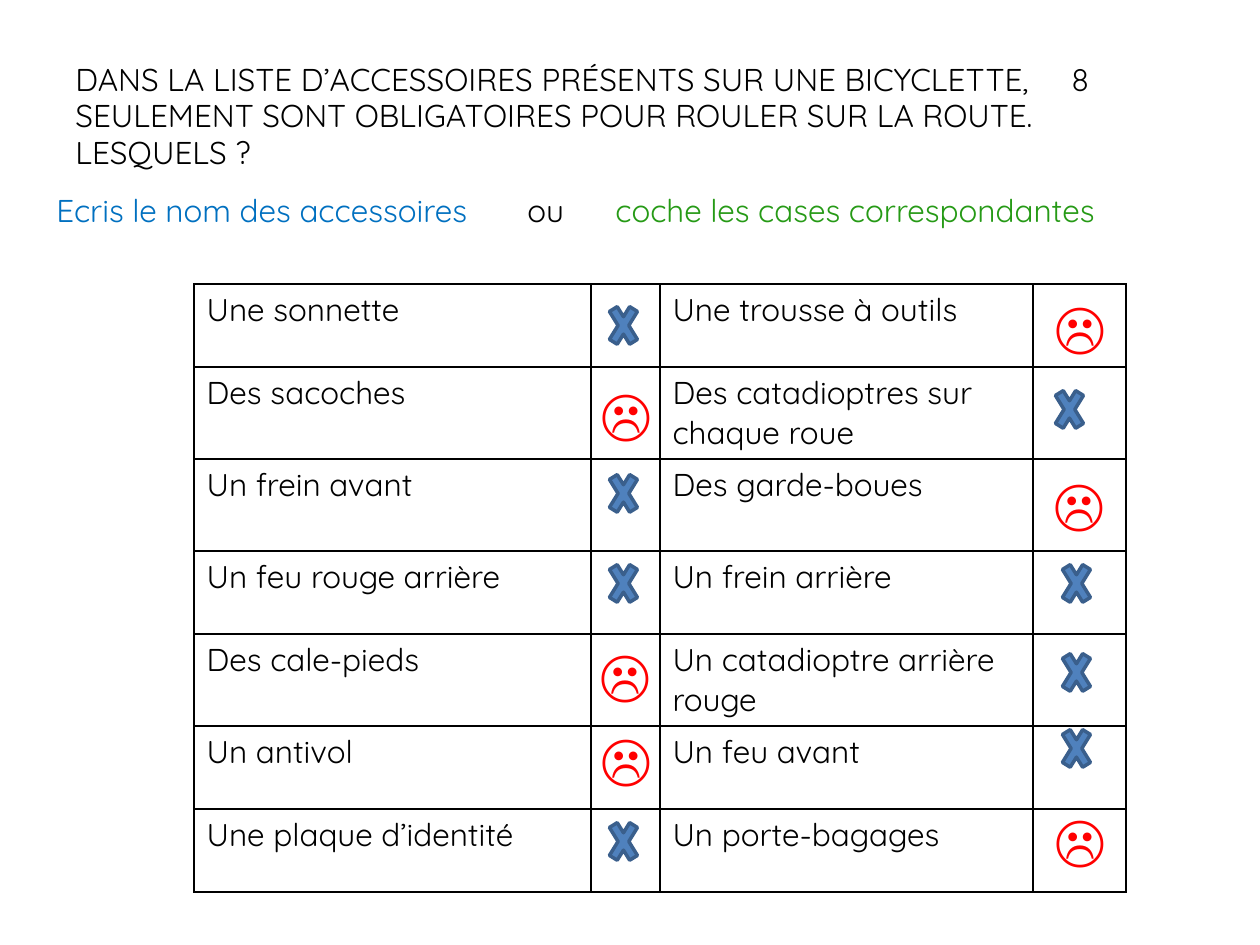
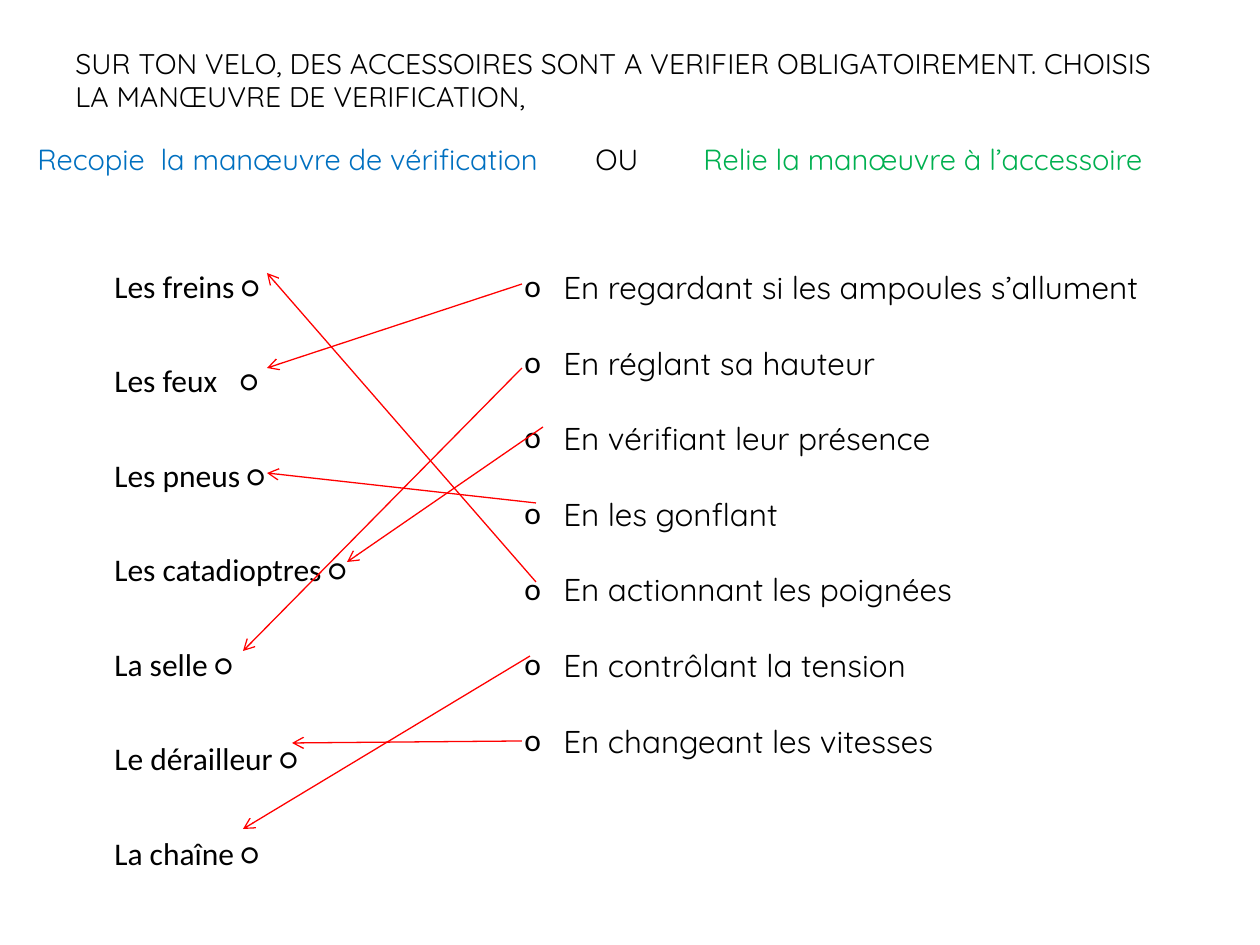
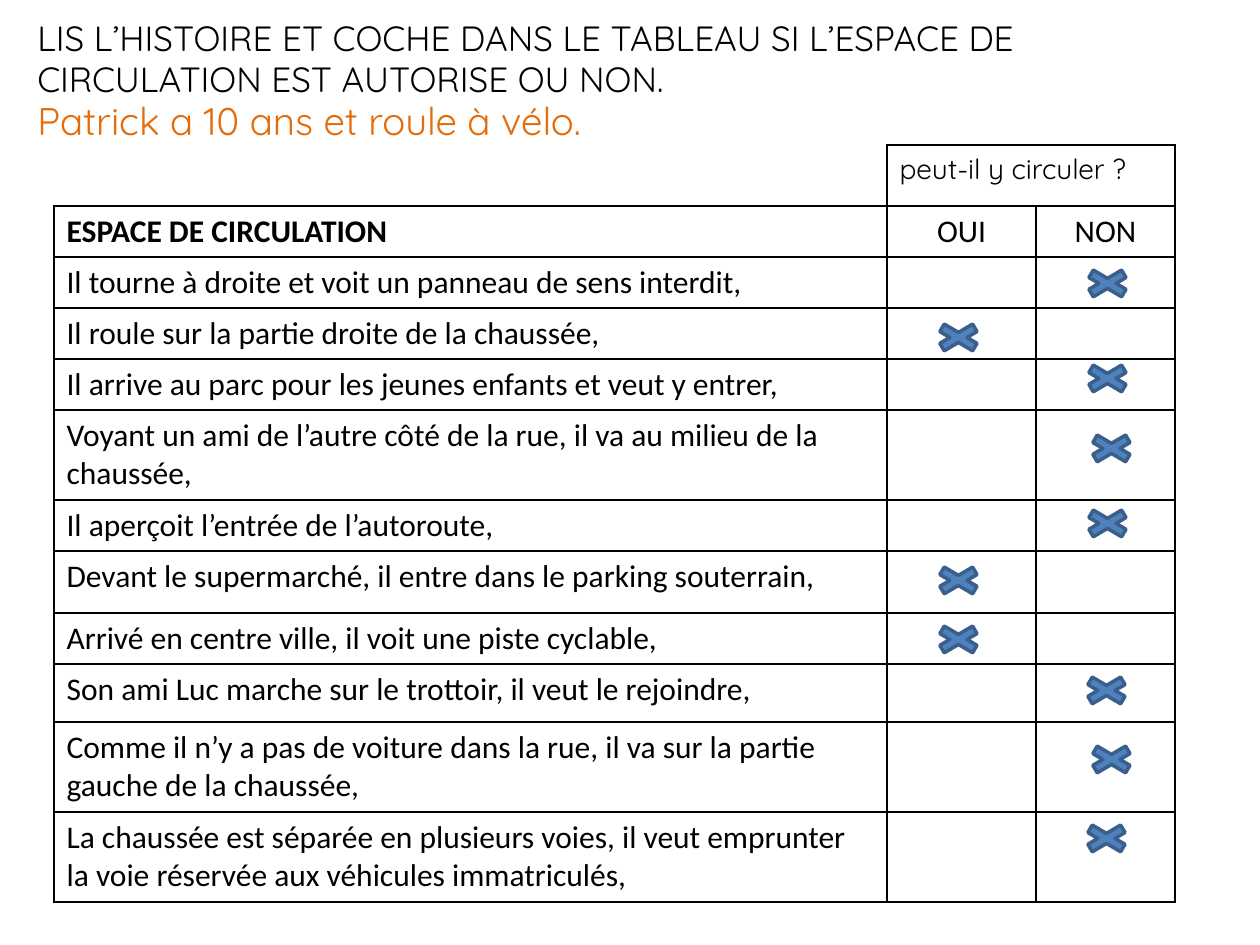
from dataclasses import dataclass

from lxml.etree import SubElement
from pptx import Presentation
from pptx.dml.color import RGBColor
from pptx.enum.shapes import MSO_CONNECTOR, MSO_SHAPE
from pptx.enum.text import MSO_ANCHOR, PP_ALIGN
from pptx.oxml import parse_xml
from pptx.oxml.ns import nsdecls, qn
from pptx.util import Emu, Pt


@dataclass(frozen=True)
class Theme:
    ink: str = "000000"
    blue: str = "0070C0"
    leaf: str = "269A16"
    green: str = "00B050"
    orange: str = "E46C0A"
    red: str = "FF0000"
    mark: str = "4F81BD"
    edge: str = "3A5F8C"
    hand: str = "Quicksand"
    plain: str = "Calibri"
    base: float = 18
    small: float = 16
    face: float = 32


T = Theme()
CROSS = (39, 63)
FLAT = (63, 37)

PARTS = [
    ("Une sonnette", "Une trousse à outils"),
    ("Des sacoches", "Des catadioptres sur chaque roue"),
    ("Un frein avant", "Des garde-boues"),
    ("Un feu rouge arrière", "Un frein arrière"),
    ("Des cale-pieds", "Un catadioptre arrière rouge"),
    ("Un antivol", "Un feu avant"),
    ("Une plaque d’identité", "Un porte-bagages"),
]
NEEDED = [(604, 294), (604, 462), (604, 552), (604, 810),
          (1057, 552), (1057, 641), (1057, 717), (1050, 378)]
EXTRA = [(588, 372), (587, 633), (588, 717),
         (1042, 285), (1041, 462), (1042, 798)]

ITEMS = ["Les freins ○", "Les feux \t○", "Les pneus ○", "Les catadioptres ○",
         "La selle ○", "Le dérailleur ○", "La chaîne ○"]
CHECKS = ["En regardant si les ampoules s’allument", "En réglant sa hauteur",
          "En vérifiant leur présence", "En les gonflant",
          "En actionnant les poignées", "En contrôlant la tension",
          "En changeant les vitesses"]
LINKS = [((522, 284), (267, 368)), ((522, 368), (243, 651)),
         ((543, 427), (347, 562)), ((536, 582), (267, 273)),
         ((536, 503), (267, 473)), ((530, 656), (243, 829)),
         ((522, 741), (292, 743))]

PLACES = [
    "Il tourne à droite et voit un panneau de sens interdit,",
    "Il roule sur la partie droite de la chaussée,",
    "Il arrive au parc pour les jeunes enfants et veut y entrer,",
    "Voyant un ami de l’autre côté de la rue, il va au milieu de la chaussée,",
    "Il aperçoit l’entrée de l’autoroute,",
    "Devant le supermarché, il entre dans le parking souterrain,",
    "Arrivé en centre ville, il voit une piste cyclable,",
    "Son ami Luc marche sur le trottoir, il veut le rejoindre,",
    "Comme il n’y a pas de voiture dans la rue, il va sur la partie gauche "
    "de la chaussée,",
    "La chaussée est séparée en plusieurs voies, il veut emprunter la voie "
    "réservée aux véhicules immatriculés,",
]
ANSWERS = [(1076, 265), (927, 319), (1076, 360), (1080, 430), (1076, 505),
           (927, 562), (927, 621), (1075, 672), (1080, 741), (1075, 820)]


def px(n):
    return Emu(round(n * 914400 / 126))


def rgb(code):
    return RGBColor.from_string(code)


def style(run, size=T.base, color=T.ink, font=T.hand, bold=False):
    run.font.size = Pt(size)
    run.font.name = font
    run.font.bold = bold
    run.font.color.rgb = rgb(color)


def write(slide, box, lines, size=T.base, color=T.ink, font=T.hand, gap=None):
    """Add a text box with one paragraph per line and return its frame."""
    frame = slide.shapes.add_textbox(*map(px, box)).text_frame
    frame.word_wrap = True
    frame.text = "\n".join(lines)
    for para in frame.paragraphs:
        para.line_spacing = gap
        for run in para.runs:
            style(run, size, color, font)
    return frame


def stops(para, places):
    tabs = SubElement(para._p.get_or_add_pPr(), qn("a:tabLst"))
    for place in places:
        SubElement(tabs, qn("a:tab"), pos=str(px(place)), algn="l")


def title(slide, box, lines, size):
    frame = write(slide, box, lines, size, gap=0.96)
    frame.vertical_anchor = MSO_ANCHOR.MIDDLE
    return frame


def choice(slide, box, words, colors, places, size):
    """Write the two tasks and the word between them, set apart by tab stops."""
    para = write(slide, box, [""]).paragraphs[0]
    stops(para, places)
    for i, (word, color) in enumerate(zip(words, colors)):
        run = para.add_run()
        run.text = "\t" + word if i else word
        style(run, size, color)


def bullet(para):
    props = para._p.get_or_add_pPr()
    props.set("marL", str(px(39)))
    props.set("indent", str(-px(39)))
    SubElement(props, qn("a:buFont"), typeface=T.plain)
    SubElement(props, qn("a:buChar"), char="o")


def border(cell, sides):
    props = cell._tc.get_or_add_tcPr()
    for i, side in enumerate(sides):
        props.insert(i, parse_xml(
            f'<a:ln{side} {nsdecls("a")} w="12700"><a:solidFill>'
            f'<a:srgbClr val="{T.ink}"/></a:solidFill></a:ln{side}>'))


def grid(slide, spot, cols, rows, data, font):
    shape = slide.shapes.add_table(
        len(rows), len(cols), *map(px, (*spot, sum(cols), sum(rows))))
    table = shape.table
    table.first_row = table.horz_banding = False
    for col, width in zip(table.columns, cols):
        col.width = px(width)
    for row, height, texts in zip(table.rows, rows, data):
        row.height = px(height)
        for cell, text in zip(row.cells, texts):
            cell.fill.background()
            if text:
                cell.text_frame.text = text
                style(cell.text_frame.paragraphs[0].runs[0], font=font)
    return table


def crosses(slide, spots, size):
    for spot in spots:
        mark = slide.shapes.add_shape(
            MSO_SHAPE.MATH_MULTIPLY, *map(px, (*spot, *size)))
        mark.shadow.inherit = False
        mark.fill.solid()
        mark.fill.fore_color.rgb = rgb(T.mark)
        mark.line.color.rgb = rgb(T.edge)
        mark.line.width = Pt(2)


def arrow(slide, start, end):
    link = slide.shapes.add_connector(
        MSO_CONNECTOR.STRAIGHT, *map(px, (*start, *end)))
    link.line.color.rgb = rgb(T.red)
    link.line.width = Pt(0.75)
    SubElement(link.line._get_or_add_ln(), qn("a:tailEnd"), type="arrow")
    SubElement(link._element.spPr, qn("a:effectLst"))


def gear(slide):
    title(slide, (63, 38, 1134, 158), [
        "DANS LA LISTE D’ACCESSOIRES PRÉSENTS SUR UNE BICYCLETTE,\t8 "
        "SEULEMENT SONT OBLIGATOIRES POUR ROULER SUR LA ROUTE. LESQUELS ?"],
        T.base)
    stops(slide.shapes[0].text_frame.paragraphs[0], [996])
    choice(slide, (44, 185, 1162, 63),
           ["Ecris le nom des accessoires", "ou",
            "coche les cases correspondantes"],
           [T.blue, T.ink, T.leaf], [471, 559], T.base)
    data = [(left, "", right, "") for left, right in PARTS]
    table = grid(slide, (194, 284), [397, 69, 373, 93],
                 [83, 92, 92, 83, 92, 83, 83], data, T.hand)
    for cell in table.iter_cells():
        border(cell, "LRTB")
    crosses(slide, NEEDED, CROSS)
    for spot in EXTRA:
        write(slide, (*spot, 72, 81), ["☹"], T.face, T.red)


def match(slide):
    title(slide, (63, 38, 1134, 87), [
        "SUR TON VELO, DES ACCESSOIRES SONT A VERIFIER OBLIGATOIREMENT. "
        "CHOISIS LA MANŒUVRE DE VERIFICATION,"], 16.2)
    choice(slide, (25, 135, 1201, 73),
           ["Recopie  la manœuvre de vérification", "OU",
            "Relie la manœuvre à l’accessoire"],
           [T.blue, T.ink, T.green], [558, 666], 16.6)
    write(slide, (102, 204, 329, 680), ITEMS, font=T.plain, gap=2.5)
    frame = write(slide, (512, 224, 704, 662), CHECKS, gap=2.0)
    for para in frame.paragraphs:
        bullet(para)
    for start, end in LINKS:
        arrow(slide, start, end)


def story(slide):
    frame = title(slide, (25, 4, 1235, 156), [
        "LIS L’HISTOIRE ET COCHE DANS LE TABLEAU SI L’ESPACE DE "
        "CIRCULATION EST AUTORISE OU NON.",
        "Patrick a 10 ans et roule à vélo."], 20)
    style(frame.paragraphs[1].runs[0], 22, T.orange)
    data = [("", "peut-il y circuler ?", ""),
            ("ESPACE DE CIRCULATION", "OUI", "NON")]
    data += [(place, "", "") for place in PLACES]
    table = grid(slide, (54, 145), [833, 149, 139],
                 [61, 51, 51, 51, 51, 90, 51, 62, 51, 58, 90, 90],
                 data, T.plain)
    table.cell(0, 1).merge(table.cell(0, 2))
    for i, cell in enumerate(table.iter_cells()):
        border(cell, "LRTB" if i else "RB")
    style(table.cell(0, 1).text_frame.paragraphs[0].runs[0], T.small)
    style(table.cell(1, 0).text_frame.paragraphs[0].runs[0],
          font=T.plain, bold=True)
    for col in (1, 2):
        table.cell(1, col).text_frame.paragraphs[0].alignment = PP_ALIGN.CENTER
    crosses(slide, ANSWERS, FLAT)


def main():
    deck = Presentation()
    deck.slide_width, deck.slide_height = px(1260), px(945)
    for build in (gear, match, story):
        build(deck.slides.add_slide(deck.slide_layouts[6]))
    deck.save("out.pptx")


if __name__ == "__main__":
    main()
